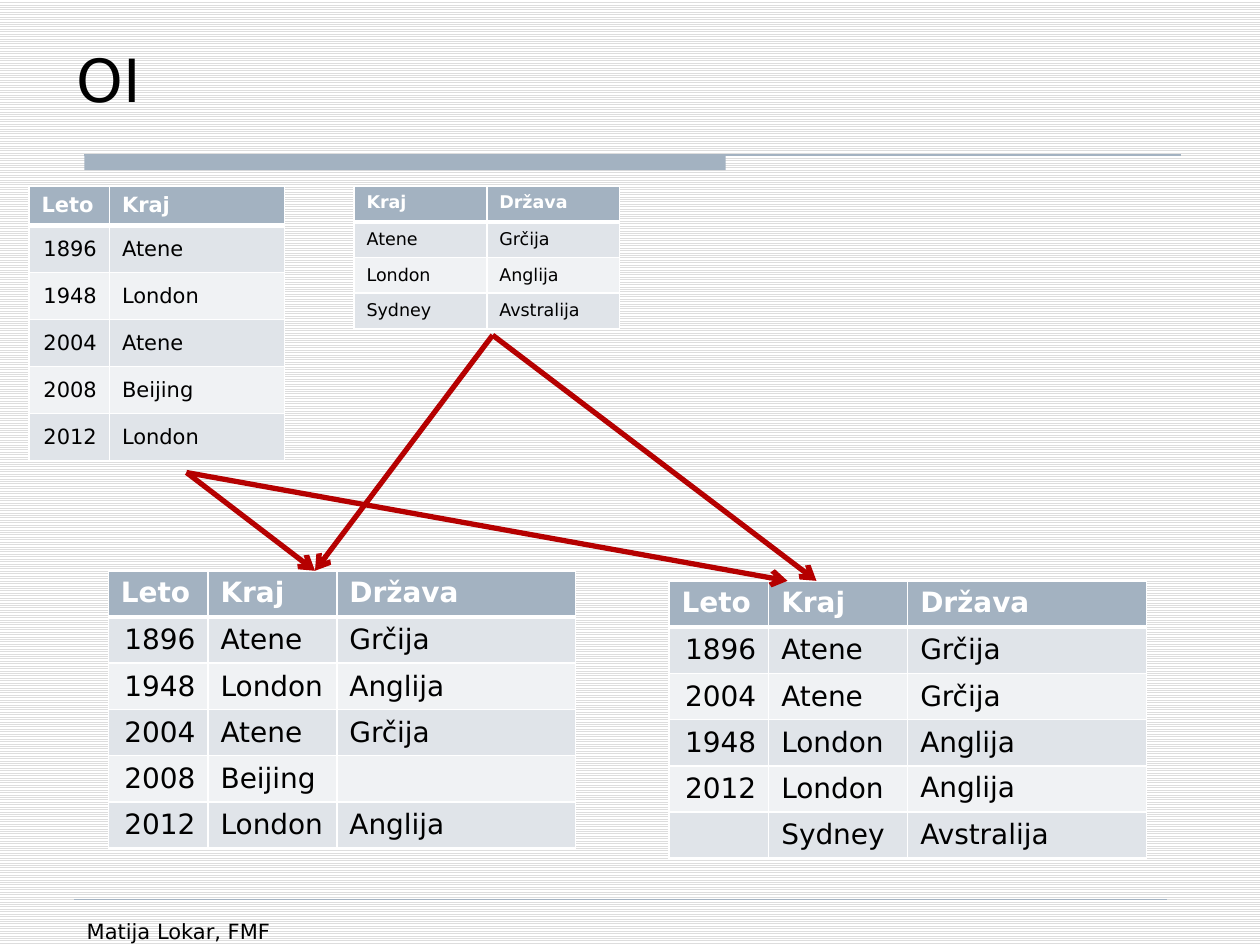
from dataclasses import dataclass

from lxml import etree
from pptx import Presentation
from pptx.dml.color import RGBColor
from pptx.enum.dml import MSO_PATTERN
from pptx.enum.shapes import MSO_CONNECTOR, MSO_SHAPE
from pptx.enum.text import MSO_ANCHOR as Anchor, PP_ALIGN as Align
from pptx.oxml.ns import qn
from pptx.util import Pt


@dataclass(frozen=True)
class Theme:
    font: str = "DejaVu Sans"
    ink: str = "000000"
    white: str = "FFFFFF"
    stripe: str = "DDDDDD"
    accent: str = "A3B2C1"
    bands: tuple[str, str] = ("E0E4E9", "F0F2F4")
    arrow: str = "B50000"
    title_size: float = 34
    footer_size: float = 12
    source_size: float = 12
    lookup_size: float = 10
    join_size: float = 16


@dataclass(frozen=True)
class Relation:
    left: float
    top: float
    widths: tuple[float, ...]
    header_height: float
    row_height: float
    size: float
    rows: tuple[tuple[str, ...], ...]
    top_cells: tuple[tuple[int, int], ...] = ()


@dataclass(frozen=True)
class Line:
    start: tuple[float, float]
    end: tuple[float, float]
    color: str
    width: float
    arrow: bool = False


THEME = Theme()

# Source tables and the two joins made from them
GAMES = Relation(16.56, 106.56, (46, 100.2), 22.3, 26.9, THEME.source_size, (
    ("Leto", "Kraj"),
    ("1896", "Atene"),
    ("1948", "London"),
    ("2004", "Atene"),
    ("2008", "Beijing"),
    ("2012", "London"),
))
COUNTRIES = Relation(202.32, 106.56, (75.9, 75.9), 20.3, 20.3, THEME.lookup_size, (
    ("Kraj", "Država"),
    ("Atene", "Grčija"),
    ("London", "Anglija"),
    ("Sydney", "Avstralija"),
))
LEFT_JOIN = Relation(61.92, 326.16, (57, 73.6, 136.4), 26.4, 26.4, THEME.join_size, (
    ("Leto", "Kraj", "Država"),
    ("1896", "Atene", "Grčija"),
    ("1948", "London", "Anglija"),
    ("2004", "Atene", "Grčija"),
    ("2008", "Beijing", ""),
    ("2012", "London", "Anglija"),
), ((5, 2),))
RIGHT_JOIN = Relation(382.32, 331.92, (57, 79.4, 136.4), 26.4, 26.4, THEME.join_size, (
    ("Leto", "Kraj", "Država"),
    ("1896", "Atene", "Grčija"),
    ("2004", "Atene", "Grčija"),
    ("1948", "London", "Anglija"),
    ("2012", "London", "Anglija"),
    ("", "Sydney", "Avstralija"),
), ((4, 2), (5, 2)))

# Arrows from each source table to each join
GAMES_EXIT = (106.56, 270)
COUNTRIES_EXIT = (281.52, 191.52)
LEFT_ENTRY = (180, 326.16)
ARROWS = [
    Line(start, end, THEME.arrow, 3, arrow=True)
    for start, end in (
        (GAMES_EXIT, LEFT_ENTRY),
        (COUNTRIES_EXIT, LEFT_ENTRY),
        (GAMES_EXIT, (450, 331.92)),
        (COUNTRIES_EXIT, (466.56, 331.92)),
    )
]
RULES = [
    Line((48.24, 88.56), (674.64, 88.56), THEME.accent, 0.75),
    Line((42.48, 514.08), (666.72, 514.08), THEME.accent, 0.25),
]


def rgb(color: str) -> RGBColor:
    return RGBColor.from_string(color)


def write_text(frame, text: str, *, size: float, color: str = THEME.ink,
               bold: bool = False, align=Align.LEFT) -> None:
    paragraph = frame.paragraphs[0]
    paragraph.alignment = align
    if not text:
        # An empty cell keeps the height of its row's text
        etree.SubElement(paragraph._p, qn("a:endParaRPr"), sz=str(int(size * 100)))
        return
    run = paragraph.add_run()
    run.text = text
    run.font.name = THEME.font
    run.font.size = Pt(size)
    run.font.bold = bold
    run.font.color.rgb = rgb(color)


def add_label(slide, text: str, box: tuple[float, ...], size: float, anchor=Anchor.TOP) -> None:
    frame = slide.shapes.add_textbox(*map(Pt, box)).text_frame
    frame.word_wrap = True
    frame.vertical_anchor = anchor
    write_text(frame, text, size=size)


def add_line(slide, line: Line) -> None:
    connector = slide.shapes.add_connector(
        MSO_CONNECTOR.STRAIGHT, *map(Pt, line.start + line.end))
    connector.line.color.rgb = rgb(line.color)
    connector.line.width = Pt(line.width)
    properties = connector._element.spPr
    if line.arrow:
        etree.SubElement(properties.find(qn("a:ln")), qn("a:tailEnd"), type="arrow")
    etree.SubElement(properties, qn("a:effectLst"))


def set_borders(cell, top: float, bottom: float) -> None:
    properties = cell._tc.get_or_add_tcPr()
    sides = (("L", 1), ("R", 1), ("T", top), ("B", bottom))
    for position, (side, width) in enumerate(sides):
        border = etree.Element(qn(f"a:ln{side}"), w=str(Pt(width)))
        fill = etree.SubElement(border, qn("a:solidFill"))
        etree.SubElement(fill, qn("a:srgbClr"), val=THEME.white)
        properties.insert(position, border)


def add_relation(slide, relation: Relation) -> None:
    heights = [relation.header_height] + [relation.row_height] * (len(relation.rows) - 1)
    table = slide.shapes.add_table(
        len(heights), len(relation.widths), Pt(relation.left), Pt(relation.top),
        Pt(sum(relation.widths)), Pt(sum(heights))).table
    table.first_row = table.horz_banding = False
    for column, width in zip(table.columns, relation.widths):
        column.width = Pt(width)
    for r, (height, values) in enumerate(zip(heights, relation.rows)):
        table.rows[r].height = Pt(height)
        header = r == 0
        for c, value in enumerate(values):
            cell = table.cell(r, c)
            cell.fill.solid()
            cell.fill.fore_color.rgb = rgb(THEME.accent if header else THEME.bands[(r - 1) % 2])
            at_top = header or (r, c) in relation.top_cells
            cell.vertical_anchor = Anchor.TOP if at_top else Anchor.MIDDLE
            set_borders(cell, top=3 if r == 1 else 1, bottom=3 if header else 1)
            write_text(cell.text_frame, value, size=relation.size, bold=header,
                       color=THEME.white if header else THEME.ink,
                       align=Align.RIGHT if value.isdigit() else Align.LEFT)


def main() -> None:
    deck = Presentation()
    deck.slide_width, deck.slide_height = Pt(720), Pt(540)
    slide = deck.slides.add_slide(deck.slide_layouts[6])

    # Striped background
    backdrop = slide.background.fill
    backdrop.patterned()
    backdrop.pattern = MSO_PATTERN.LIGHT_HORIZONTAL
    backdrop.fore_color.rgb = rgb(THEME.stripe)
    backdrop.back_color.rgb = rgb(THEME.white)

    # Title bar and rules
    bar = slide.shapes.add_shape(
        MSO_SHAPE.RECTANGLE, Pt(48.24), Pt(88.56), Pt(366.5), Pt(8.64))
    bar.shadow.inherit = False
    bar.fill.solid()
    bar.fill.fore_color.rgb = rgb(THEME.accent)
    bar.line.fill.background()
    for rule in RULES:
        add_line(slide, rule)

    # Title and footer
    add_label(slide, "OI", (36.72, 15.12, 630, 54), THEME.title_size, Anchor.BOTTOM)
    add_label(slide, "Matija Lokar, FMF", (42.48, 521.28, 156.24, 37.44), THEME.footer_size)

    # Tables and arrows
    for relation in (GAMES, COUNTRIES, LEFT_JOIN, RIGHT_JOIN):
        add_relation(slide, relation)
    for arrow in ARROWS:
        add_line(slide, arrow)

    deck.save("out.pptx")


if __name__ == "__main__":
    main()
